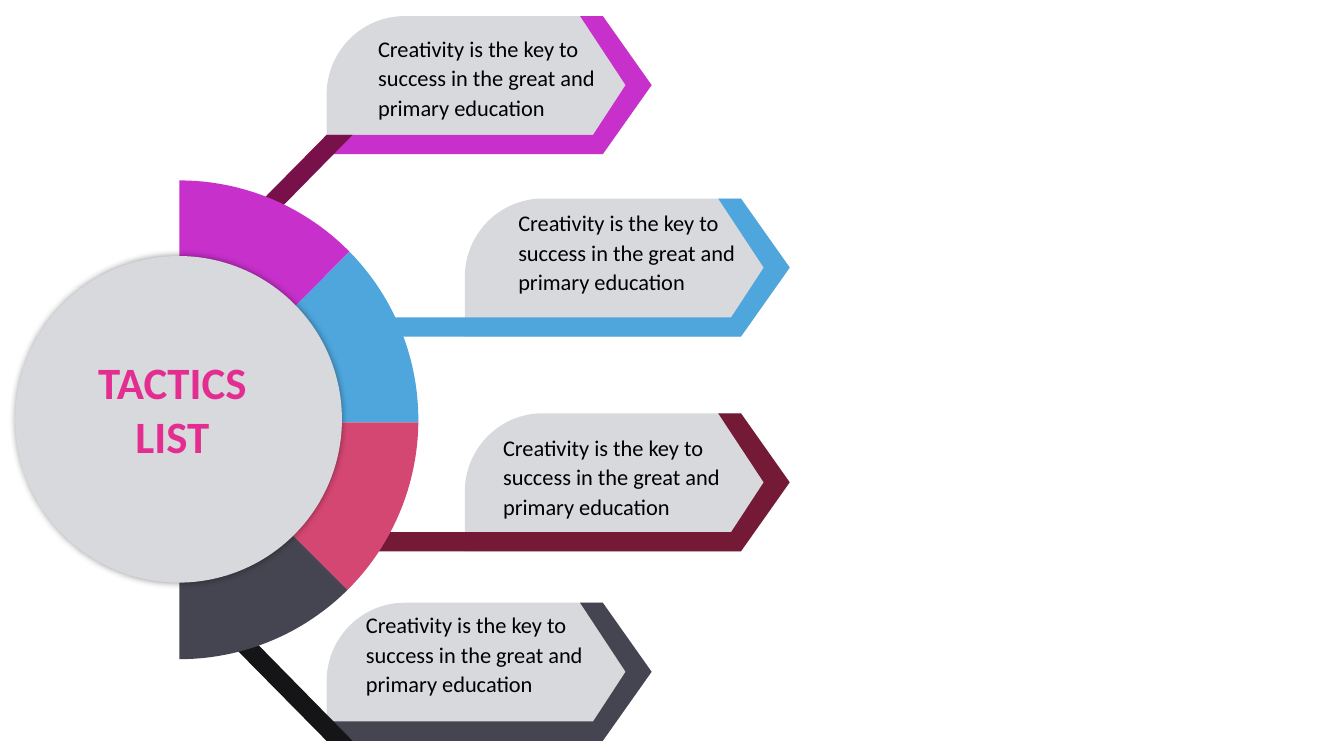
from dataclasses import dataclass
from math import cos, radians, sin

from lxml import etree
from pptx import Presentation
from pptx.dml.color import RGBColor
from pptx.enum.shapes import MSO_SHAPE
from pptx.enum.text import MSO_ANCHOR, PP_ALIGN
from pptx.oxml.ns import qn
from pptx.util import Inches, Pt

OVAL = MSO_SHAPE.OVAL
TOP = MSO_ANCHOR.TOP
CENTER = PP_ALIGN.CENTER

WIDTH, HEIGHT = Inches(13.33), Inches(7.5)
COL, ROW = WIDTH / 100, HEIGHT / 100
ARC_STEPS = 24


@dataclass(frozen=True)
class Theme:
    font: str = "Calibri"
    title_size: int = 32
    body_size: int = 16
    title: str = "E32D91"
    text: str = "000000"
    panel: str = "D8D9DC"
    magenta: str = "C830CC"
    plum: str = "781049"
    blue: str = "4EA6DC"
    wine: str = "741A36"
    rose: str = "D54773"
    slate: str = "454551"
    black: str = "151517"


THEME = Theme()
MESSAGE = "Creativity is the key to success in the great and primary education"

# left and top of the card, band colour, band start, text offset, and an
# optional strut: colour, its height on the card, direction (1 is down)
CARDS = [
    (24.3, 2.13, THEME.magenta, 0, (2.93, 1.33), (THEME.plum, 0.86, 1)),
    (34.58, 26.27, THEME.blue, -0.3, (3.08, 0.27), None),
    (34.58, 54.67, THEME.wine, -0.35, (1.95, 1.6), None),
    (24.3, 79.73, THEME.slate, 0, (2.03, 0), (THEME.black, 1, -1)),
]
CARD_SIZE = (24.18, 18.27)
TEXT_SIZE = (20.18, 13.2)
WEDGES = [
    (90, 44.6, THEME.magenta),
    (44.6, -0.6, THEME.blue),
    (-0.6, -45.3, THEME.rose),
    (-45.3, -90, THEME.slate),
]


def grid_box(left, top, width, height):
    return tuple(round(v) for v in (left * COL, top * ROW, width * COL, height * ROW))


def arc(cx, cy, rx, ry, start, end):
    """Points along an ellipse, with angles in degrees counterclockwise."""
    angles = [radians(start + (end - start) * i / ARC_STEPS) for i in range(ARC_STEPS + 1)]
    return [(cx + rx * cos(a), cy - ry * sin(a)) for a in angles]


def paint(shape, color):
    shape.fill.solid()
    shape.fill.fore_color.rgb = RGBColor.from_string(color)
    shape.line.fill.background()
    shape.shadow.inherit = False


def polygon(s, points, color):
    first, *rest = [(round(x), round(y)) for x, y in points]
    builder = s.shapes.build_freeform(*first)
    builder.add_line_segments(rest, close=True)
    paint(builder.convert_to_shape(), color)


def add_message(s, box):
    tf = s.shapes.add_textbox(*box).text_frame
    tf.word_wrap = True
    tf.margin_left = tf.margin_right = Inches(0.12)
    tf.margin_top = tf.margin_bottom = Inches(0.06)
    p = tf.paragraphs[0]
    p.text = MESSAGE
    p.line_spacing = 1.1
    p.font.name = THEME.font
    p.font.size = Pt(THEME.body_size)
    p.font.color.rgb = RGBColor.from_string(THEME.text)


def add_card(s, box, color, band_start, strut):
    left, top, width, height = box

    def place(shares):
        return [(left + x * width, top + y * height) for x, y in shares]

    corner = arc(0.24, 0.57, 0.24, 0.57, 90, 180)
    polygon(s, place(corner + [(0, 1), (0.85, 1), (1, 0.5), (0.85, 0)]), THEME.panel)
    polygon(s, place([(0.85, 0), (0.78, 0), (0.92, 0.5), (0.82, 0.86),
                      (band_start, 0.86), (band_start, 1), (0.85, 1), (1, 0.5)]), color)
    if strut:
        strut_color, base, way = strut
        outline = [(0, 0), (-0.39, 0.93), (-0.35, 1.03), (0.08, 0)]
        polygon(s, place([(x, base + way * y) for x, y in outline]), strut_color)


def add_fan(s, box):
    """Half ring of wedges; the box holds the whole circle."""
    left, top, width, height = box
    cx, cy = left + width / 2, top + height / 2
    apex = (cx, cy + 0.01 * width / 2)
    for start, end, color in WEDGES:
        polygon(s, [apex] + arc(cx, cy, width / 2, height / 2, start, end), color)


def add_hub(s, box):
    hub = s.shapes.add_shape(OVAL, *box)
    paint(hub, THEME.panel)
    effects = hub._element.spPr.find(qn("a:effectLst"))
    shadow = etree.SubElement(effects, qn("a:outerShdw"), blurRad=str(Pt(5)), dist="0",
                              dir="0", algn="ctr", rotWithShape="0")
    tint = etree.SubElement(shadow, qn("a:srgbClr"), val="000000")
    etree.SubElement(tint, qn("a:alpha"), val="40000")


def add_title(s, box):
    title = s.shapes.title
    title.left, title.top, title.width, title.height = box
    s.shapes._spTree.append(title._element)  # in front of the hub
    tf = title.text_frame
    tf.text = "TACTICS\nLIST"
    tf.word_wrap = False
    tf.vertical_anchor = TOP
    for p in tf.paragraphs:
        p.alignment = CENTER
        p.font.name = THEME.font
        p.font.size = Pt(THEME.title_size)
        p.font.bold = True
        p.font.color.rgb = RGBColor.from_string(THEME.title)


def build_tactics_slide(prs):
    s = prs.slides.add_slide(prs.slide_layouts[5])
    for left, top, color, band_start, (dx, dy), strut in CARDS:
        add_card(s, grid_box(left, top, *CARD_SIZE), color, band_start, strut)
        add_message(s, grid_box(left + dx, top + dy, *TEXT_SIZE))
    add_fan(s, grid_box(-4.43, 23.87, 35.56, 63.33))
    add_hub(s, grid_box(1.13, 33.87, 24.31, 43.2))
    add_title(s, grid_box(6.38, 46.27, 12.9, 15.73))


def main():
    prs = Presentation()
    prs.slide_width, prs.slide_height = WIDTH, HEIGHT
    build_tactics_slide(prs)
    prs.save("out.pptx")


if __name__ == "__main__":
    main()
